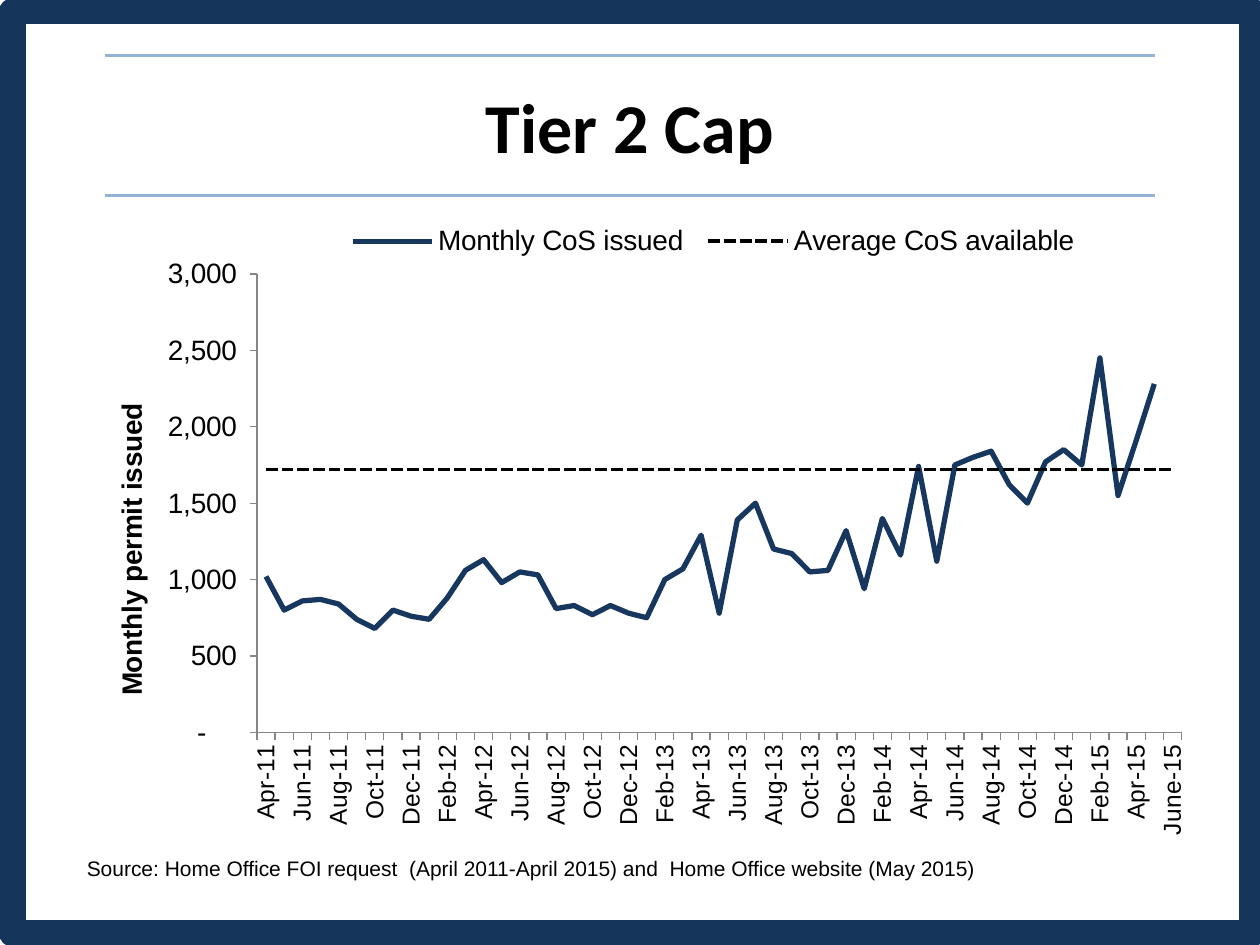
from lxml.etree import SubElement
from pptx import Presentation
from pptx.chart.data import CategoryChartData
from pptx.dml.color import RGBColor
from pptx.enum.chart import XL_CHART_TYPE, XL_LEGEND_POSITION, XL_TICK_MARK
from pptx.enum.dml import MSO_LINE
from pptx.enum.shapes import MSO_CONNECTOR, MSO_SHAPE
from pptx.enum.text import MSO_ANCHOR, PP_ALIGN
from pptx.oxml import parse_xml
from pptx.oxml.ns import nsdecls, qn
from pptx.util import Pt

TITLE = "Tier 2 Cap"
SOURCE = ("Source: Home Office FOI request  (April 2011-April 2015) and  "
          "Home Office website (May 2015)")
AXIS_TITLE = "Monthly permit issued"
MONTHS = "Jan Feb Mar Apr May Jun Jul Aug Sep Oct Nov Dec".split()
ISSUED = [
    1020, 800, 860, 870, 840, 740, 680, 800, 760,
    740, 880, 1060, 1130, 980, 1050, 1030, 810, 830, 770, 830, 780,
    750, 1000, 1070, 1290, 780, 1390, 1500, 1200, 1170, 1050, 1060, 1320,
    940, 1400, 1160, 1740, 1120, 1750, 1800, 1840, 1620, 1500, 1770, 1850,
    1750, 2450, 1550, 1910, 2280,
]
AVERAGE = 1720
FIRST_MONTH = 3  # April 2011
MONTH_COUNT = 51
NUMBER_FORMAT = '_-* #,##0_-;\\-* #,##0_-;_-* "-"??_-;_-@_-'

NAVY = RGBColor(0x16, 0x35, 0x5A)
SERIES_BLUE = RGBColor(0x17, 0x37, 0x5E)
RULE_BLUE = RGBColor(0x95, 0xB3, 0xD7)
AXIS_GRAY = RGBColor(0x86, 0x86, 0x86)
BLACK = RGBColor(0, 0, 0)


def style_font(font, size, name="Arial", bold=False):
    font.size, font.name, font.bold = Pt(size), name, bold
    font.color.rgb = BLACK


def add_rule(page, y):
    rule = page.shapes.add_connector(
        MSO_CONNECTOR.STRAIGHT, Pt(60), Pt(y), Pt(660), Pt(y))
    rule.line.color.rgb = RULE_BLUE
    rule.line.width = Pt(1.5)
    SubElement(rule._element.spPr, qn("a:effectLst"))


def place(element, index, inner=False, **fractions):
    """Give a chart part a fixed place, as fractions of the chart."""
    for old in element.findall(qn("c:layout")):
        element.remove(old)
    layout = parse_xml(f"<c:layout {nsdecls('c')}><c:manualLayout/></c:layout>")
    manual = layout[0]
    if inner:
        SubElement(manual, qn("c:layoutTarget")).set("val", "inner")
    for key in ("x", "y"):
        SubElement(manual, qn(f"c:{key}Mode")).set("val", "edge")
    for key, value in fractions.items():
        SubElement(manual, qn(f"c:{key}")).set("val", str(value))
    element.insert(index, layout)


def add_cap_chart(page):
    data = CategoryChartData(number_format=NUMBER_FORMAT)
    positions = range(FIRST_MONTH, FIRST_MONTH + MONTH_COUNT)
    labels = [f"{MONTHS[i % 12]}-{11 + i // 12}" for i in positions]
    labels[-1] = "June-15"
    data.categories = labels
    data.add_series("Monthly CoS issued", ISSUED + [None])
    data.add_series("Average CoS available", [AVERAGE] * MONTH_COUNT)
    chart = page.shapes.add_chart(
        XL_CHART_TYPE.LINE, Pt(42.5), Pt(111.6), Pt(652.3), Pt(374.4), data).chart
    style_font(chart.font, 10)
    chart.has_title = False

    chart.plots[0].vary_by_categories = False
    styles = [(SERIES_BLUE, 3, MSO_LINE.SOLID), (BLACK, 2.25, MSO_LINE.SQUARE_DOT)]
    for series, (color, width, dash) in zip(chart.plots[0].series, styles):
        series.smooth = False
        line = series.format.line
        line.color.rgb, line.width, line.dash_style = color, Pt(width), dash

    months, values = chart.category_axis, chart.value_axis
    for axis, size in ((months, 14), (values, 16)):
        style_font(axis.tick_labels.font, size)
        axis.has_major_gridlines = False
        axis.major_tick_mark = XL_TICK_MARK.OUTSIDE
        axis.minor_tick_mark = XL_TICK_MARK.NONE
        axis.format.line.color.rgb = AXIS_GRAY
        axis.format.line.width = Pt(0.75)
    months._element.txPr.bodyPr.set("rot", "-5400000")
    last = months._element.find(qn("c:noMultiLvlLbl"))
    for tag, step in (("tickLblSkip", 2), ("tickMarkSkip", 1)):
        last.addprevious(parse_xml(f'<c:{tag} {nsdecls("c")} val="{step}"/>'))

    values.minimum_scale, values.maximum_scale, values.major_unit = 0, 3000, 500
    values.tick_labels.number_format = NUMBER_FORMAT
    values.tick_labels.number_format_is_linked = False
    frame = values.axis_title.text_frame
    frame.text = AXIS_TITLE
    style_font(frame.paragraphs[0].font, 16, bold=True)
    frame._txBody.bodyPr.set("rot", "-5400000")
    frame._txBody.bodyPr.set("vert", "horz")

    chart.has_legend = True
    chart.legend.position = XL_LEGEND_POSITION.TOP
    chart.legend.include_in_layout = False
    style_font(chart.legend.font, 16)

    place(chart._chartSpace.chart.plotArea, 0, inner=True,
          x=0.16, y=0.12, w=0.81, h=0.7)
    place(values.axis_title._element, 1, x=0.03, y=0.31)
    place(chart.legend._element, 1, x=0.23, y=0.04, w=0.66, h=0.06)


def main():
    deck = Presentation()
    deck.slide_width, deck.slide_height = Pt(720), Pt(540)
    page = deck.slides.add_slide(deck.slide_layouts[5])

    for y in (111.6, 31.7):
        add_rule(page, y)

    border = page.shapes.add_shape(
        MSO_SHAPE.RECTANGLE, Pt(7.2), Pt(6.5), Pt(708.5), Pt(527))
    border.shadow.inherit = False
    border.fill.background()
    border.line.color.rgb = NAVY
    border.line.width = Pt(15)

    title = page.shapes.title
    title.left, title.top, title.width, title.height = Pt(36), Pt(31.7), Pt(648), Pt(80)
    title.text_frame.text = TITLE
    title.text_frame.vertical_anchor = MSO_ANCHOR.MIDDLE
    para = title.text_frame.paragraphs[0]
    para.alignment = PP_ALIGN.CENTER
    style_font(para.font, 40, "Calibri", bold=True)

    box = page.shapes.add_textbox(Pt(42.5), Pt(485.3), Pt(646.6), Pt(22))
    box.text_frame.word_wrap = True
    box.text_frame.text = SOURCE
    style_font(box.text_frame.paragraphs[0].font, 12)

    add_cap_chart(page)
    deck.save("out.pptx")


if __name__ == "__main__":
    main()
